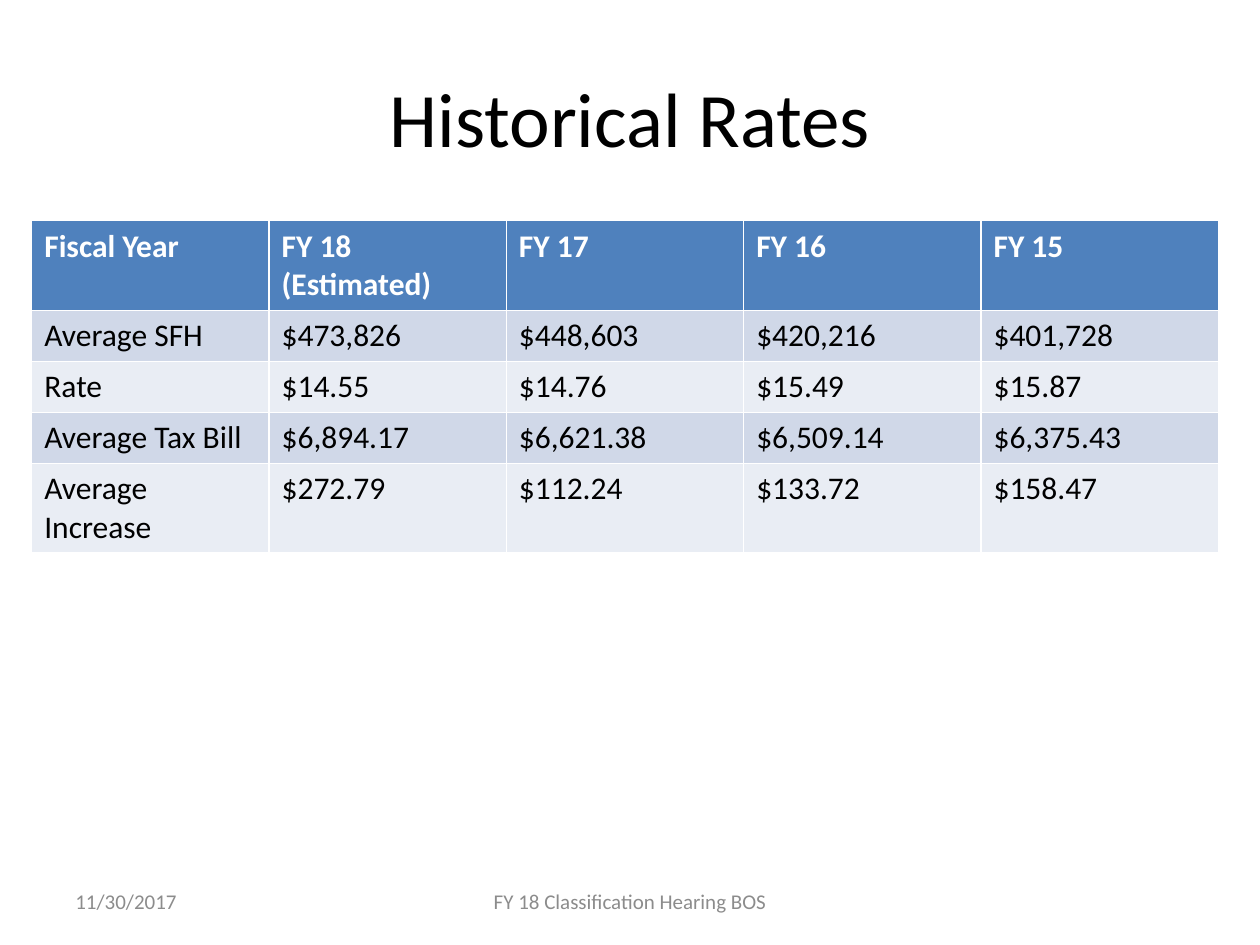
from pptx import Presentation
from pptx.dml.color import RGBColor
from pptx.enum.text import MSO_ANCHOR, PP_ALIGN
from pptx.util import Cm, Pt

LEFT, CENTER = PP_ALIGN.LEFT, PP_ALIGN.CENTER
MIDDLE = MSO_ANCHOR.MIDDLE
TITLE_ONLY = 5
FONT = "Calibri"
BLACK, WHITE, GREY = "000000", "FFFFFF", "8C8C8C"
HEAD, BANDS = "4F81BD", ("D0D8E8", "E9EDF4")

RATES = [
    ("Fiscal Year", "FY 18 (Estimated)", "FY 17", "FY 16", "FY 15"),
    ("Average SFH", "$473,826", "$448,603", "$420,216", "$401,728"),
    ("Rate", "$14.55", "$14.76", "$15.49", "$15.87"),
    ("Average Tax Bill", "$6,894.17", "$6,621.38", "$6,509.14", "$6,375.43"),
    ("Average Increase", "$272.79", "$112.24", "$133.72", "$158.47"),
]


def color(code):
    return RGBColor.from_string(code)


def write(frame, text, size, ink, align=LEFT, bold=False):
    para = frame.paragraphs[0]
    para.alignment = align
    run = para.add_run()
    run.text = text
    font = run.font
    font.name, font.size, font.bold = FONT, Pt(size), bold
    font.color.rgb = color(ink)


def add_title(slide, box, text):
    title = slide.shapes.title
    title.left, title.top, title.width, title.height = map(Cm, box)
    title.text_frame.vertical_anchor = MIDDLE
    write(title.text_frame, text, 44, BLACK, CENTER)


def add_rates(slide, box, rows):
    """Row heights are minimums; rows with wrapped text grow."""
    table = slide.shapes.add_table(len(rows), len(rows[0]), *map(Cm, box)).table
    for col in table.columns:
        col.width = Cm(box[2] / len(rows[0]))
    for r, row in enumerate(rows):
        table.rows[r].height = Cm(box[3] / len(rows))
        fill = BANDS[(r - 1) % 2] if r else HEAD
        for c, text in enumerate(row):
            cell = table.cell(r, c)
            cell.fill.solid()
            cell.fill.fore_color.rgb = color(fill)
            write(cell.text_frame, text, 18, BLACK if r else WHITE, bold=r == 0)


def add_note(slide, box, text, align):
    frame = slide.shapes.add_textbox(*map(Cm, box)).text_frame
    frame.word_wrap = True
    frame.vertical_anchor = MIDDLE
    write(frame, text, 12, GREY, align)


def add_footer(slide, box, date, name):
    left, top, width, height = box
    mid = 8.04
    add_note(slide, (left, top, 5.93, height), date, LEFT)
    add_note(slide, (left + (width - mid) / 2, top, mid, height), name, CENTER)


def main():
    deck = Presentation()
    deck.slide_width, deck.slide_height = Cm(25.4), Cm(19.05)
    slide = deck.slides.add_slide(deck.slide_layouts[TITLE_ONLY])
    add_title(slide, (1.27, 0.76, 22.86, 3.18), "Historical Rates")
    add_rates(slide, (0.64, 4.45, 23.92, 5.15), RATES)
    add_footer(slide, (1.27, 17.66, 22.86, 1.01), "11/30/2017",
               "FY 18 Classification Hearing BOS")
    deck.save("out.pptx")


if __name__ == "__main__":
    main()
